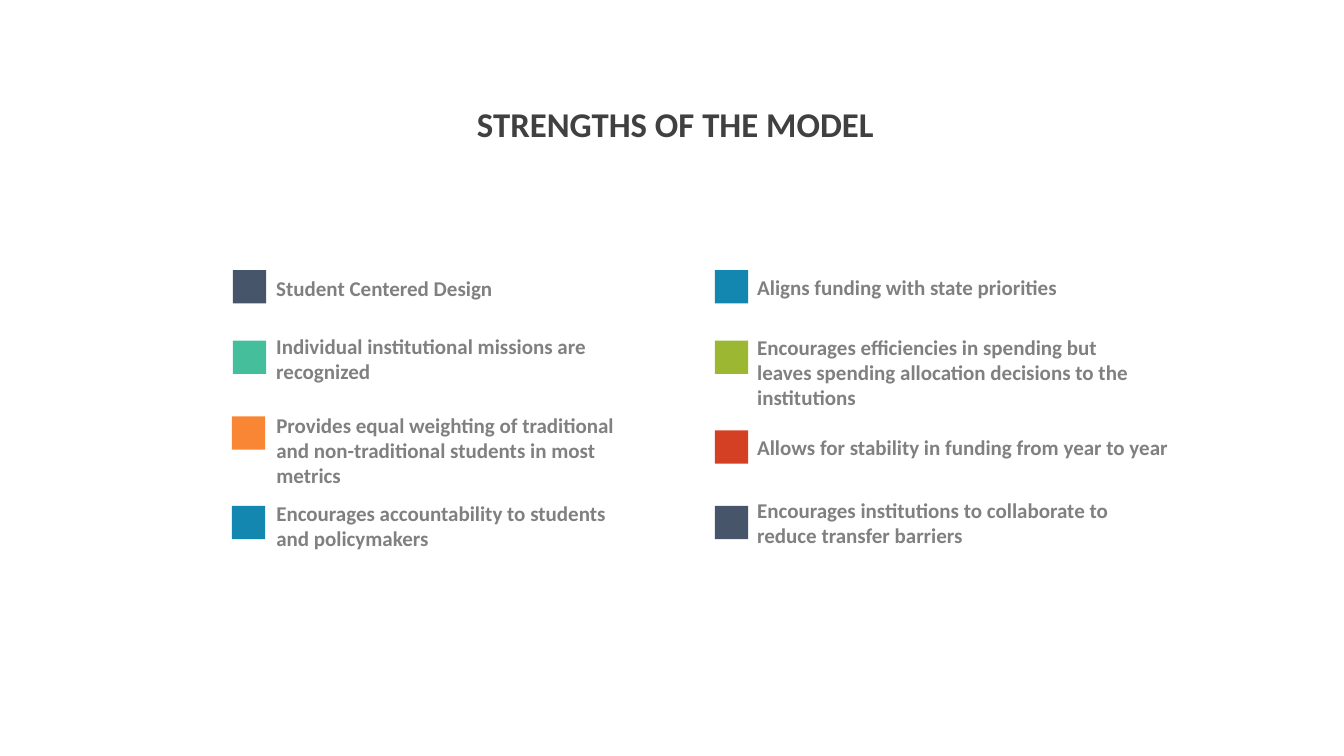
from dataclasses import dataclass

from pptx import Presentation
from pptx.dml.color import RGBColor
from pptx.enum.shapes import MSO_SHAPE
from pptx.enum.text import MSO_ANCHOR, PP_ALIGN
from pptx.slide import Slide
from pptx.util import Inches, Pt

SLATE = RGBColor(0x46, 0x55, 0x6A)
BLUE = RGBColor(0x14, 0x87, 0xB1)
TEAL = RGBColor(0x44, 0xBE, 0x9B)
GREEN = RGBColor(0x9C, 0xB8, 0x33)
ORANGE = RGBColor(0xF9, 0x86, 0x34)
RED = RGBColor(0xD4, 0x40, 0x24)
DARK = RGBColor(0x40, 0x40, 0x40)
GRAY = RGBColor(0x80, 0x80, 0x80)

FONT = "Calibri"
MARKER_SIZE = 0.33
LEFT_TEXT, RIGHT_TEXT = 2.74, 7.51
RIGHT_MARKER = 7.09


@dataclass(frozen=True)
class Strength:
    text: str
    color: RGBColor
    marker_left: float
    marker_top: float
    left: float
    top: float
    width: float
    height: float = 0.53


STRENGTHS = [
    Strength("Student Centered Design", SLATE,
             2.31, 2.68, LEFT_TEXT, 2.67, 3.3, 0.38),
    Strength("Individual institutional missions are recognized", TEAL,
             2.31, 3.38, LEFT_TEXT, 3.31, 3.3, 0.5),
    Strength("Provides equal weighting of traditional and non-traditional "
             "students in most metrics", ORANGE,
             2.3, 4.13, LEFT_TEXT, 4.2, 3.58),
    Strength("Encourages accountability to students and policymakers", BLUE,
             2.3, 5.02, LEFT_TEXT, 4.95, 3.58),
    Strength("Aligns funding with state priorities", BLUE,
             RIGHT_MARKER, 2.68, RIGHT_TEXT, 2.58, 3.58),
    Strength("Encourages efficiencies in spending but leaves spending "
             "allocation decisions to the institutions", GREEN,
             RIGHT_MARKER, 3.38, RIGHT_TEXT, 3.32, 3.79, 0.74),
    Strength("Allows for stability in funding from year to year", RED,
             RIGHT_MARKER, 4.27, RIGHT_TEXT, 4.17, 4.16),
    Strength("Encourages institutions to collaborate to reduce transfer "
             "barriers", SLATE,
             RIGHT_MARKER, 5.02, RIGHT_TEXT, 4.92, 3.57),
]


def add_text(s: Slide, text: str, left: float, top: float, width: float,
             height: float, *, size: float = 15, color: RGBColor = GRAY,
             align: PP_ALIGN = PP_ALIGN.LEFT, inset: float = 0.04) -> None:
    sp = s.shapes.add_textbox(Inches(left), Inches(top),
                              Inches(width), Inches(height))
    tf = sp.text_frame
    tf.word_wrap = True
    tf.vertical_anchor = MSO_ANCHOR.MIDDLE
    tf.margin_left = tf.margin_right = 0
    tf.margin_top = tf.margin_bottom = Inches(inset)
    p = tf.paragraphs[0]
    p.alignment = align
    r = p.add_run()
    r.text = text
    r.font.name = FONT
    r.font.size = Pt(size)
    r.font.bold = True
    r.font.color.rgb = color


def add_marker(s: Slide, left: float, top: float, color: RGBColor) -> None:
    sp = s.shapes.add_shape(MSO_SHAPE.ROUNDED_RECTANGLE, Inches(left),
                            Inches(top), Inches(MARKER_SIZE),
                            Inches(MARKER_SIZE))
    sp.adjustments[0] = 0
    sp.shadow.inherit = False
    sp.fill.solid()
    sp.fill.fore_color.rgb = color
    sp.line.fill.background()


def add_strength(s: Slide, item: Strength) -> None:
    add_marker(s, item.marker_left, item.marker_top, item.color)
    add_text(s, item.text, item.left, item.top, item.width, item.height)


def main() -> None:
    prs = Presentation()
    prs.slide_width = Inches(13.33)
    prs.slide_height = Inches(7.5)
    s = prs.slides.add_slide(prs.slide_layouts[6])
    add_text(s, "STRENGTHS OF THE MODEL", 0.84, 0.99, 11.72, 0.47,
             size=24.8, color=DARK, align=PP_ALIGN.CENTER, inset=0.11)
    for item in STRENGTHS:
        add_strength(s, item)
    prs.save("out.pptx")


if __name__ == "__main__":
    main()
